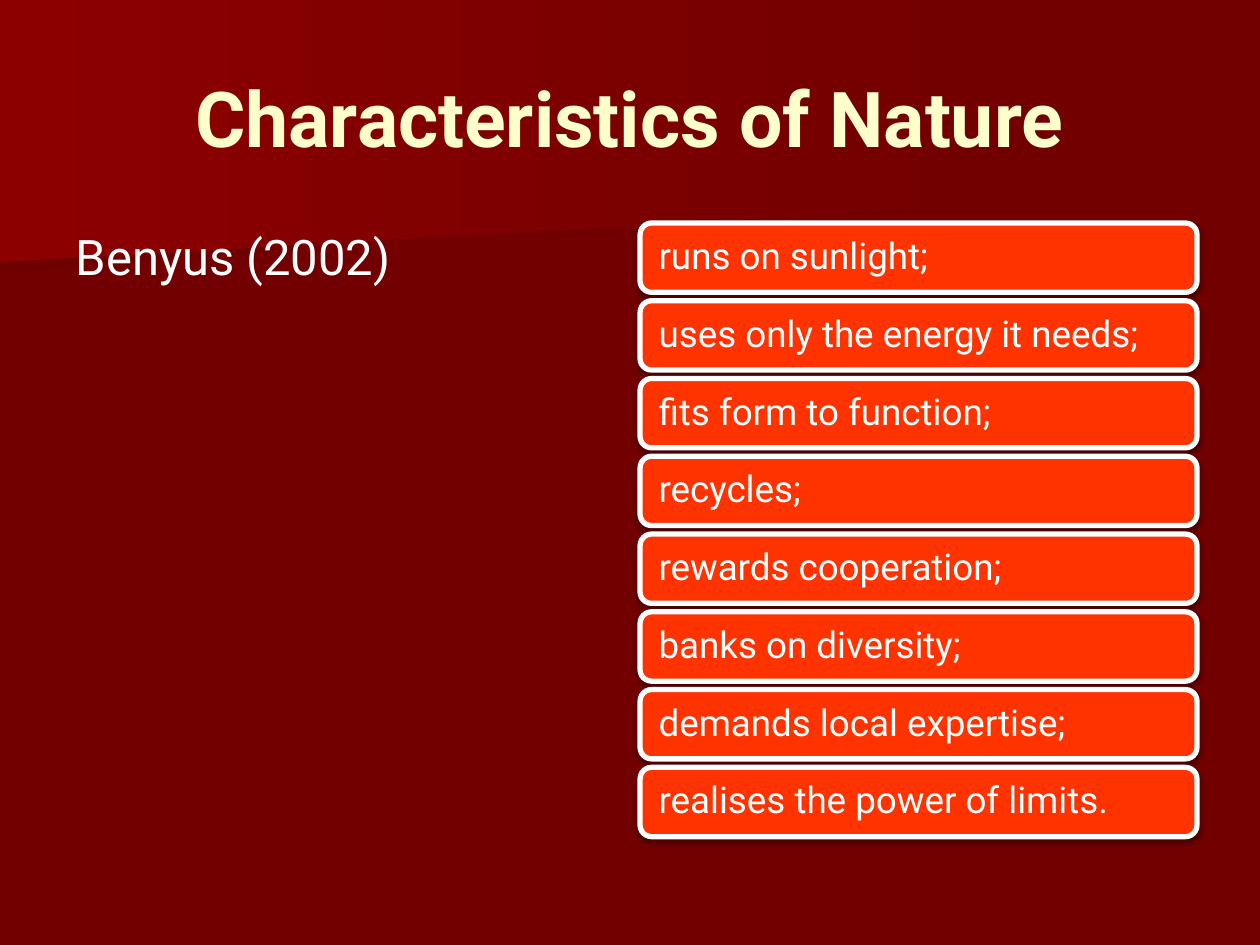
from typing import NamedTuple

from lxml import etree
from pptx import Presentation
from pptx import util as u
from pptx.dml import color
from pptx.enum import shapes, text
from pptx.oxml import ns

FONT = "Roboto"
WHITE = "FFFFFF"
DARK = "720000"


class Box(NamedTuple):
    left: float
    top: float
    width: float
    height: float


class Band(NamedTuple):
    points: list[tuple[float, float]]
    start: str


BANDS = [
    Band([(7.78, 1.53), (0, 2.17), (0, 1.01), (7.79, 1.01), (7.78, 1.28)], "6F0000"),
    Band([(7.92, 1.62), (0, 2.08), (0, 0), (7.92, 0)], "8C0000"),
]
TRAITS = [
    "runs on sunlight;",
    "uses only the energy it needs;",
    "fits form to function;",
    "recycles;",
    "rewards cooperation;",
    "banks on diversity;",
    "demands local expertise;",
    "realises the power of limits.",
]
FIRST = Box(5.08, 1.77, 4.42, 0.55)
LAST_TOP = 6.09


def rgb(code: str) -> color.RGBColor:
    return color.RGBColor.from_string(code)


def place(shape, box: Box) -> None:
    shape.left, shape.top, shape.width, shape.height = map(u.Inches, box)


def write(shape, words: str, size: float, ink: str, align, anchor, bold=False):
    frame = shape.text_frame
    frame.word_wrap = True
    frame.auto_size = text.MSO_AUTO_SIZE.NONE
    frame.vertical_anchor = anchor
    para = frame.paragraphs[0]
    para.alignment = align
    run = para.add_run()
    run.text = words
    run.font.name = FONT
    run.font.size = u.Pt(size)
    run.font.bold = bold
    run.font.color.rgb = rgb(ink)
    return para


def draw_band(slide, band: Band, depth: int) -> None:
    points = [(u.Inches(x), u.Inches(y)) for x, y in band.points]
    pen = slide.shapes.build_freeform(*points[0])
    pen.add_line_segments(points[1:], close=True)
    shape = pen.convert_to_shape()
    shape.shadow.inherit = False
    shape.line.fill.background()
    shape.fill.gradient()
    shape.fill.gradient_angle = 0
    for stop, code, spot in zip(shape.fill.gradient_stops, (band.start, DARK), (0, 1)):
        stop.color.rgb = rgb(code)
        stop.position = spot
    slide.shapes._spTree.insert(depth, shape._element)


def add_shadow(shape) -> None:
    shape.shadow.inherit = False
    effects = shape._element.spPr.find(ns.qn("a:effectLst"))
    outer = etree.SubElement(
        effects, ns.qn("a:outerShdw"), blurRad=str(u.Pt(3.1)),
        dist=str(u.Pt(1.6)), dir="5400000", rotWithShape="0")
    tint = etree.SubElement(outer, ns.qn("a:srgbClr"), val="000000")
    etree.SubElement(tint, ns.qn("a:alpha"), val="38000")


def draw_trait(slide, words: str, box: Box) -> None:
    shape = slide.shapes.add_shape(
        shapes.MSO_SHAPE.ROUNDED_RECTANGLE, *map(u.Inches, box))
    shape.fill.solid()
    shape.fill.fore_color.rgb = rgb("FF3300")
    shape.line.color.rgb = rgb(WHITE)
    shape.line.width = u.Pt(3)
    add_shadow(shape)
    frame = shape.text_frame
    frame.margin_left = frame.margin_right = u.Inches(0.12)
    frame.margin_top = frame.margin_bottom = u.Inches(0.09)
    para = write(shape, words, 21, WHITE, text.PP_ALIGN.LEFT, text.MSO_ANCHOR.MIDDLE)
    para.line_spacing = 0.9


def main() -> None:
    deck = Presentation()
    deck.slide_width, deck.slide_height = u.Inches(10), u.Inches(7.5)
    slide = deck.slides.add_slide(deck.slide_layouts[1])
    slide.background.fill.solid()
    slide.background.fill.fore_color.rgb = rgb(DARK)

    for depth, band in enumerate(BANDS, 2):
        draw_band(slide, band, depth)

    title, body = slide.placeholders
    place(title, Box(0.5, 0.3, 9, 1.25))
    write(title, "Characteristics of Nature", 44, "FFFFCC",
          text.PP_ALIGN.CENTER, text.MSO_ANCHOR.MIDDLE, True)

    place(body, Box(0.5, 1.75, 4.42, 4.92))
    para = write(body, "Benyus (2002)", 28, WHITE,
                 text.PP_ALIGN.LEFT, text.MSO_ANCHOR.TOP)
    para.space_before = u.Pt(5.6)
    props = para._p.get_or_add_pPr()
    props.set("marL", "0")
    props.set("indent", "0")
    etree.SubElement(props, ns.qn("a:buNone"))

    step = (LAST_TOP - FIRST.top) / (len(TRAITS) - 1)
    for row, words in enumerate(TRAITS):
        draw_trait(slide, words, FIRST._replace(top=FIRST.top + row * step))

    deck.save("out.pptx")


if __name__ == "__main__":
    main()
